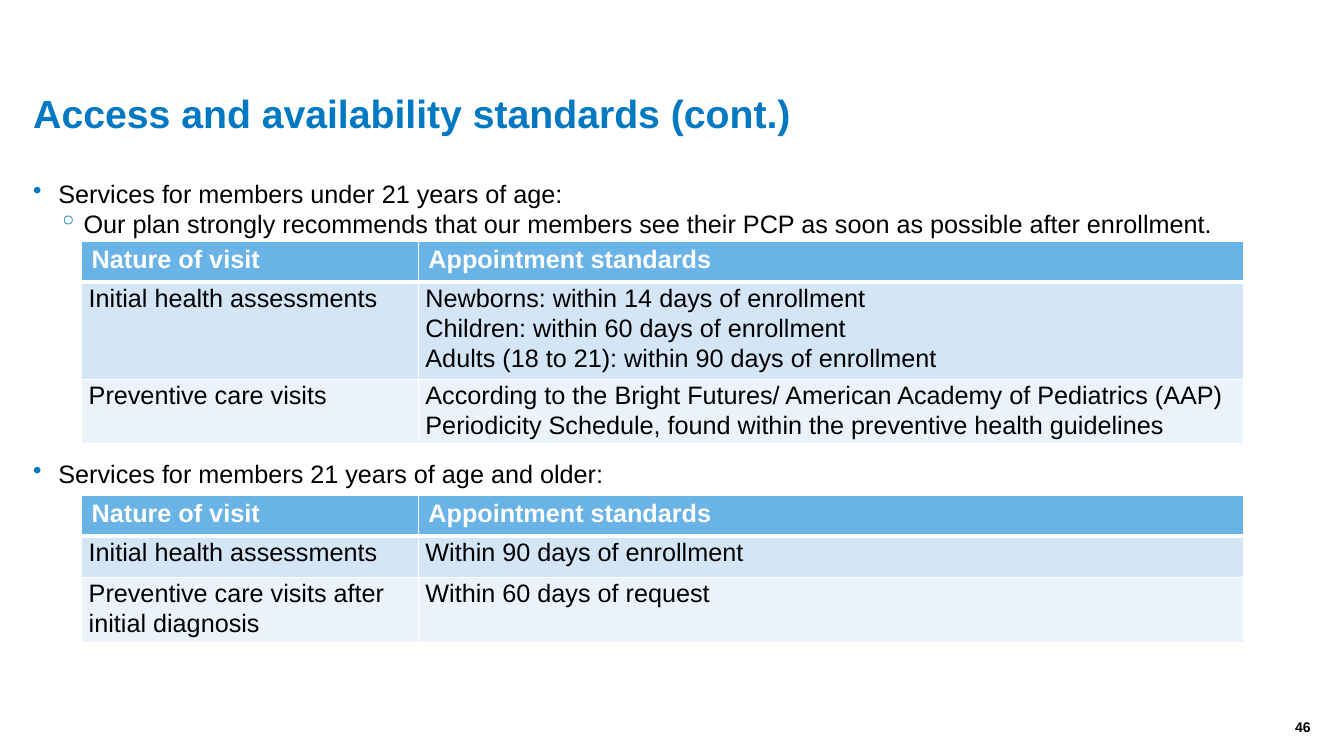
from pptx import Presentation
from pptx.dml.color import RGBColor
from pptx.enum.text import MSO_ANCHOR as Anchor, PP_ALIGN as Align
from pptx.oxml import parse_xml
from pptx.oxml.ns import nsdecls
from pptx.util import Inches, Pt

BLUE, BLACK, WHITE = "0079C2", "000000", "FFFFFF"
HEADER_FILL, ROW_FILLS = "69B3E7", ("D4E5F6", "EBF2FA")
HEADINGS = ("Nature of visit", "Appointment standards")


def color(value):
    return RGBColor.from_string(value)


class Page:
    """Holds the text style and the current slide."""

    font_name = "Arial"

    def __init__(self, deck):
        self.slide = deck.slides.add_slide(deck.slide_layouts[6])

    def style(self, para, size=18, ink=BLACK, bold=False):
        para.font.name = self.font_name
        para.font.size = Pt(size)
        para.font.bold = bold
        para.font.color.rgb = color(ink)

    def frame(self, left, top, width, height, anchor=Anchor.TOP):
        box = self.slide.shapes.add_textbox(
            Inches(left), Inches(top), Inches(width), Inches(height))
        frame = box.text_frame
        frame.word_wrap = True
        frame.vertical_anchor = anchor
        frame.margin_left = frame.margin_right = 0
        frame.margin_top = frame.margin_bottom = 0
        return frame

    def text(self, words, area, anchor, align=Align.LEFT, **style):
        para = self.frame(*area, anchor).paragraphs[0]
        para.text = words
        para.alignment = align
        self.style(para, **style)

    def bullets(self, lines, area):
        frame = self.frame(*area)
        for level, words in enumerate(lines):
            para = frame.paragraphs[0] if level == 0 else frame.add_paragraph()
            para.text = words
            para.level = level
            properties = para._p.get_or_add_pPr()
            properties.set("marL", str(Inches(0.25 * (level + 1))))
            properties.set("indent", str(Inches(-0.25)))
            properties.append(parse_xml(
                f'<a:buClr {nsdecls("a")}><a:srgbClr val="{BLUE}"/></a:buClr>'))
            properties.append(parse_xml(
                f'<a:buChar {nsdecls("a")} char="{"•◦"[level]}"/>'))
            self.style(para)

    def borders(self, cell, bottom):
        properties = cell._tc.get_or_add_tcPr()
        for side, width in zip("LRTB", (1, 1, 1, bottom)):
            properties.append(parse_xml(
                f'<a:ln{side} {nsdecls("a")} w="{Pt(width)}"><a:solidFill>'
                f'<a:srgbClr val="{WHITE}"/></a:solidFill></a:ln{side}>'))

    def fill(self, cell, value):
        cell.fill.solid()
        cell.fill.fore_color.rgb = color(value)

    def header_cell(self, cell, words):
        cell.text = words
        self.style(cell.text_frame.paragraphs[0], ink=WHITE, bold=True)
        self.borders(cell, bottom=3)
        self.fill(cell, HEADER_FILL)

    def body_cell(self, cell, words, value, below_header):
        cell.text = words
        cell.margin_left = cell.margin_right = 0
        cell.margin_top = cell.margin_bottom = 0
        for para in cell.text_frame.paragraphs:
            para._p.get_or_add_pPr().set("marL", str(Inches(0.07)))
            para.line_spacing = 1.07
            self.style(para)
        self.borders(cell, bottom=1)
        if below_header:
            top = cell._tc.tcPr.find(
                "{http://schemas.openxmlformats.org/drawingml/2006/main}lnT")
            top.set("w", str(Pt(3)))
        self.fill(cell, value)

    def visit_table(self, top, heights, rows):
        table = self.slide.shapes.add_table(
            len(heights), 2, Inches(0.81), Inches(top),
            Inches(11.52), Inches(sum(heights))).table
        for column, width in zip(table.columns, (3.34, 8.18)):
            column.width = Inches(width)
        for row, height in zip(table.rows, heights):
            row.height = Inches(height)
        for column, words in enumerate(HEADINGS):
            self.header_cell(table.cell(0, column), words)
        for index, (row, value) in enumerate(zip(rows, ROW_FILLS)):
            for column, words in enumerate(row):
                self.body_cell(table.cell(index + 1, column), words, value,
                               below_header=index == 0)


def main():
    deck = Presentation()
    deck.slide_width, deck.slide_height = Inches(13.33), Inches(7.5)
    page = Page(deck)

    # Title and page number
    page.text("Access and availability standards (cont.)",
              (0.33, 0.62, 12.6, 1), Anchor.MIDDLE, size=28, ink=BLUE, bold=True)
    page.text("46", (12.33, 7.1, 0.67, 0.2), Anchor.BOTTOM, Align.RIGHT,
              size=10, bold=True)

    # Members under 21
    page.bullets([
        "Services for members under 21 years of age:",
        "Our plan strongly recommends that our members see their PCP "
        "as soon as possible after enrollment.",
    ], (0.33, 1.77, 12.6, 0.6))
    page.visit_table(2.39, (0.41, 0.89, 0.6), [
        ("Initial health assessments",
         "Newborns: within 14 days of enrollment\n"
         "Children: within 60 days of enrollment\n"
         "Adults (18 to 21): within 90 days of enrollment"),
        ("Preventive care visits",
         "According to the Bright Futures/ American Academy of Pediatrics (AAP) "
         "Periodicity Schedule, found within the preventive health guidelines"),
    ])

    # Members 21 and older
    page.bullets(["Services for members 21 years of age and older:"],
                 (0.33, 4.55, 12.6, 0.3))
    page.visit_table(4.91, (0.41, 0.41, 0.6), [
        ("Initial health assessments", "Within 90 days of enrollment"),
        ("Preventive care visits after initial diagnosis",
         "Within 60 days of request"),
    ])

    deck.save("out.pptx")


if __name__ == "__main__":
    main()
